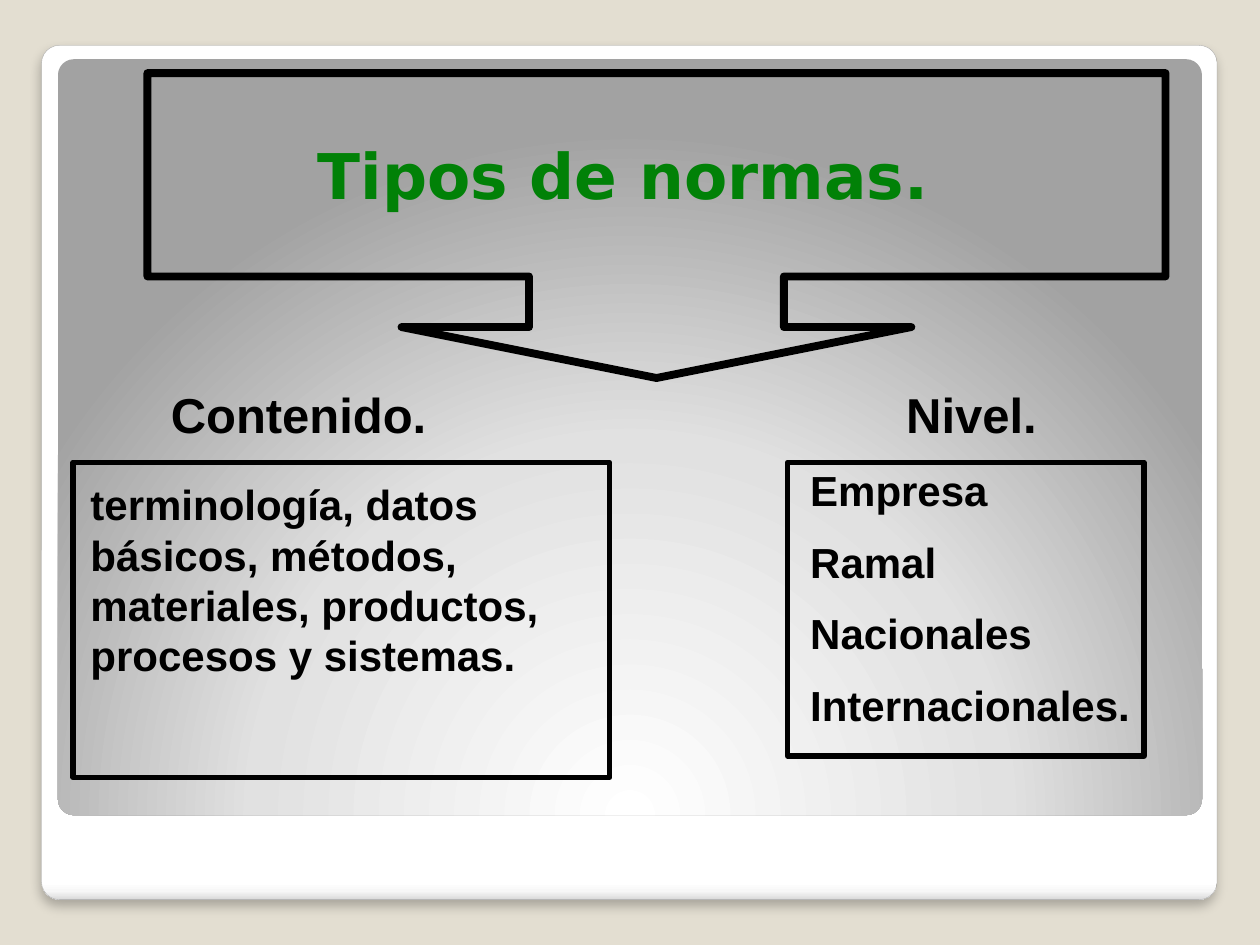
from pptx import Presentation
from pptx.dml.color import RGBColor
from pptx.enum.shapes import MSO_SHAPE
from pptx.enum.text import MSO_ANCHOR, MSO_AUTO_SIZE, PP_ALIGN
from pptx.oxml import parse_xml
from pptx.util import Inches, Pt

# Content
TITLE = "Tipos de normas."
SCOPE = ["terminología, datos básicos, métodos, materiales, productos, procesos y sistemas."]
LEVELS = ["Empresa", "Ramal", "Nacionales", "Internacionales."]
HEADS = [("Contenido.", 0.83), ("Nivel.", 6.17)]
FRAMES = [(0.58, 3.67, 4.26, 2.5), (6.25, 3.67, 2.83, 2.33)]

COLORS = {"back": "E3DED1", "title": "018107", "ink": "000000", "edge": "A4A4A4"}
CARD = [(0, "FFFFFF"), (98, "FFFFFF"), (99, "F7F7F7"), (100, "DADADA")]
GLOW = [(0, "FFFFFF"), (55, "E1E1E1"), (100, "A2A2A2")]
DOWN = '<a:lin ang="5400000" scaled="0"/>'
ROUND = ('<a:path path="circle"><a:fillToRect l="50000" t="175000" '
         'r="50000" b="-75000"/></a:path>')
NS = 'xmlns:a="http://schemas.openxmlformats.org/drawingml/2006/main"'


def color(name):
    return RGBColor.from_string(COLORS[name])


def place(shape, box):
    shape.left, shape.top, shape.width, shape.height = map(Inches, box)


def draw(kind, box, line=None, tint="ink", adj=()):
    shape = slide.shapes.add_shape(kind, *map(Inches, box))
    shape.shadow.inherit = False
    shape.fill.background()
    if line:
        shape.line.color.rgb = color(tint)
        shape.line.width = Pt(line)
    else:
        shape.line.fill.background()
    for i, value in enumerate(adj):
        shape.adjustments[i] = value
    return shape


def shade(shape, stops, kind):
    marks = "".join(f'<a:gs pos="{pos * 1000}"><a:srgbClr val="{rgb}"/></a:gs>'
                    for pos, rgb in stops)
    props = shape._element.spPr
    old = props.find("{*}noFill")
    props.replace(old, parse_xml(
        f'<a:gradFill {NS} rotWithShape="1"><a:gsLst>{marks}</a:gsLst>{kind}</a:gradFill>'))


def write(shape, lines, size, font="Arial", tint="ink", align=PP_ALIGN.LEFT,
          anchor=MSO_ANCHOR.TOP):
    frame = shape.text_frame
    frame.word_wrap = True
    frame.auto_size = MSO_AUTO_SIZE.NONE
    frame.vertical_anchor = anchor
    for i, text in enumerate(lines):
        para = frame.paragraphs[0] if i == 0 else frame.add_paragraph()
        props = para._p.get_or_add_pPr()
        props.set("marL", "0")
        props.set("indent", "0")
        props.append(parse_xml(f"<a:buNone {NS}/>"))
        para.alignment = align
        para.space_before = Pt(size / 2 if i else 0)
        run = para.add_run()
        run.text = text
        run.font.name = font
        run.font.size = Pt(size)
        run.font.bold = True
        run.font.color.rgb = color(tint)


prs = Presentation()
prs.slide_width, prs.slide_height = Inches(10), Inches(7.5)
slide = prs.slides.add_slide(prs.slide_layouts[1])
slide.background.fill.solid()
slide.background.fill.fore_color.rgb = color("back")

# Card and glowing panel, behind the placeholders
card = draw(MSO_SHAPE.ROUNDED_RECTANGLE, (0.33, 0.36, 9.33, 6.78), 0.16, "edge", [0.021])
shade(card, CARD, DOWN)
card._element.spPr.replace(card._element.spPr.find("{*}effectLst"), parse_xml(
    f'<a:effectLst {NS}><a:outerShdw blurRad="76200" dist="50800" dir="5400000" '
    'rotWithShape="0"><a:srgbClr val="000000"><a:alpha val="25000"/></a:srgbClr>'
    '</a:outerShdw></a:effectLst>'))
panel = draw(MSO_SHAPE.ROUNDED_RECTANGLE, (0.46, 0.47, 9.08, 6), adj=[0.021])
shade(panel, GLOW, ROUND)
tree = slide.shapes._spTree
for i, shape in enumerate((card, panel)):
    tree.insert(2 + i, shape._element)

# Title and list of levels
title, body = slide.shapes.title, slide.placeholders[1]
place(title, (2.42, 0.58, 8.95, 1.15))
write(title, [TITLE], 36, "DejaVu Sans", "title", anchor=MSO_ANCHOR.BOTTOM)
place(body, (6.33, 3.64, 2.75, 2.32))
write(body, LEVELS, 24)

# Scope text
scope = slide.shapes.add_textbox(*map(Inches, (0.62, 3.75, 4.26, 1.72)))
write(scope, SCOPE, 24)

# Frames and arrow callout
for box in FRAMES:
    draw(MSO_SHAPE.RECTANGLE, box, 3)
draw(MSO_SHAPE.DOWN_ARROW_CALLOUT, (1.17, 0.58, 8.08, 2.42), 4.5,
     adj=[0.836, 0.836, 0.167, 0.667])

# Column heads
for text, left in HEADS:
    head = slide.shapes.add_textbox(*map(Inches, (left, 3, 3.08, 0.57)))
    write(head, [text], 28, align=PP_ALIGN.CENTER)

prs.save("out.pptx")
